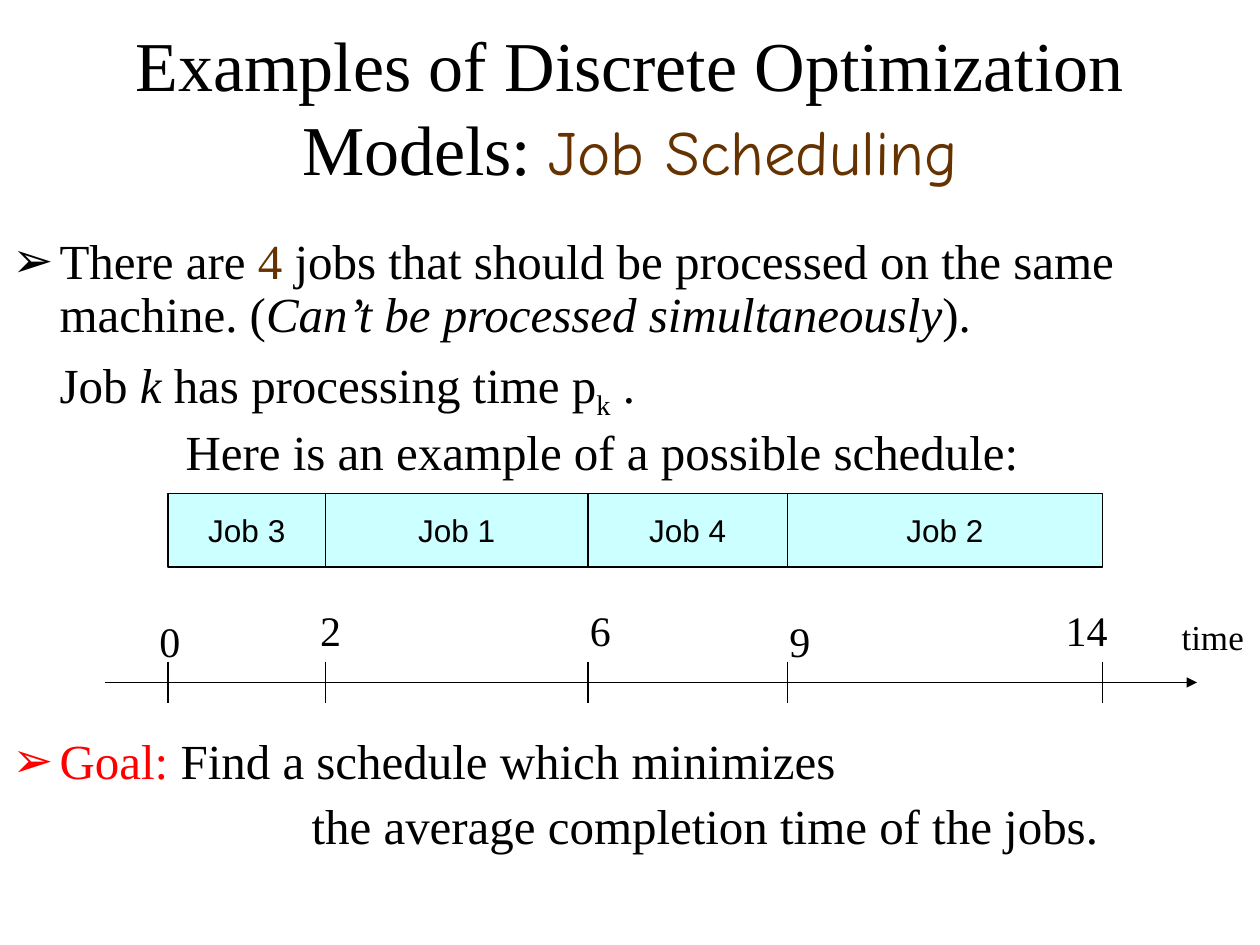
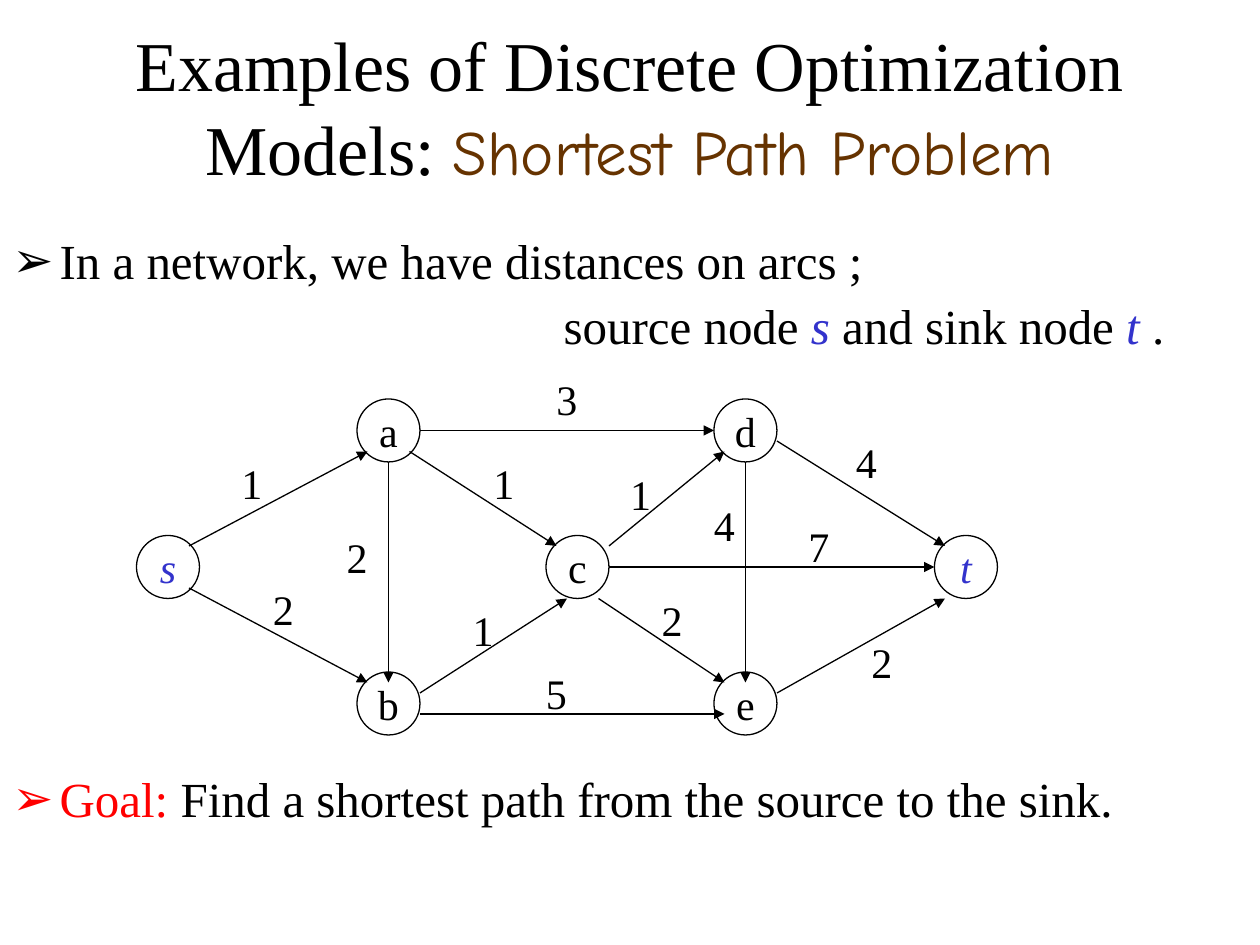
import pptx
import pptx.dml.color
import pptx.enum.shapes
import pptx.enum.text
import pptx.oxml
import pptx.oxml.ns
import pptx.util
import lxml.etree
from pptx.util import Cm, Pt

GRID = 2.54 / 12  # every position is a count of twelfths of an inch
BLACK, WHITE, BROWN = "000000", "FFFFFF", "663300"
RED, BLUE, CYAN = "FF0000", "3333CC", "CCFFFF"
SERIF, SANS, HAND = "Times New Roman", "Arial", "Comic Neue"
INDENT = 4.5
CENTER = pptx.enum.text.PP_ALIGN.CENTER
MIDDLE = pptx.enum.text.MSO_ANCHOR.MIDDLE
SHAPES = pptx.enum.shapes.MSO_SHAPE


def grid(count):
    return Cm(count * GRID)


def color(hex_code):
    return pptx.dml.color.RGBColor.from_string(hex_code)


def add_xml(parent, tag, **attributes):
    return lxml.etree.SubElement(parent, pptx.oxml.ns.qn(tag), attributes)


def set_font(font, size, name=SERIF, ink=BLACK):
    font.size, font.name = Pt(size), name
    font.color.rgb = color(ink)


def add_run(paragraph, text, ink=None, italic=False, subscript=False):
    run = paragraph.add_run()
    run.text = text
    if ink:
        run.font.color.rgb = color(ink)
    if italic:
        run.font.italic = True
    if subscript:
        run.font._element.set("baseline", "-25000")
    return run


def add_textbox(slide, left, top, width, height):
    frame = slide.shapes.add_textbox(*map(grid, (left, top, width, height))).text_frame
    frame.word_wrap = True
    return frame


def add_title(slide, topic):
    frame = add_textbox(slide, 9, 0, 102, 20)
    frame.vertical_anchor = MIDDLE
    heading = frame.paragraphs[0]
    heading.alignment = CENTER
    set_font(heading.font, 40)
    add_run(heading, "Examples of Discrete Optimization Models: ")
    set_font(add_run(heading, topic).font, 36, HAND, BROWN)


def add_body(slide, top, height, *items):
    """Each item is (left margin, bullet colour or None, runs)."""
    frame = add_textbox(slide, 0, top, 120, height)
    for number, (margin, bullet, runs) in enumerate(items):
        paragraph = frame.add_paragraph() if number else frame.paragraphs[0]
        properties = paragraph._p.get_or_add_pPr()
        properties.set("marL", str(grid(margin)))
        if bullet:
            properties.set("indent", str(-grid(INDENT)))
            add_xml(add_xml(properties, "a:buClr"), "a:srgbClr", val=bullet)
            add_xml(properties, "a:buFont", typeface=SANS)
            add_xml(properties, "a:buChar", char="➢")
        paragraph.line_spacing = 0.9
        paragraph.space_before = Pt(7)
        set_font(paragraph.font, 28)
        for run in runs:
            add_run(paragraph, *run)


def add_label(slide, text, left, top, width=6, size=24):
    label = add_textbox(slide, left, top, width, 6).paragraphs[0]
    label.alignment = CENTER
    label.text = text
    set_font(label.font, size)


def add_block(slide, kind, text, box, fill, size, font=SERIF, ink=BLACK, italic=False):
    block = slide.shapes.add_shape(kind, *map(grid, box))
    block.shadow.inherit = False
    block.fill.solid()
    block.fill.fore_color.rgb = color(fill)
    block.line.color.rgb = color(BLACK)
    block.line.width = Pt(0.75)
    frame = block.text_frame
    frame.word_wrap = False
    frame.vertical_anchor = MIDDLE
    caption = frame.paragraphs[0]
    caption.alignment = CENTER
    caption.text = text
    set_font(caption.font, size, font, ink)
    caption.font.italic = italic


def add_line(slide, start, end, arrow=False):
    line = slide.shapes.add_connector(
        pptx.enum.shapes.MSO_CONNECTOR.STRAIGHT, *map(grid, (*start, *end)))
    line.line.color.rgb = color(BLACK)
    line.line.width = Pt(0.75)
    if arrow:
        add_xml(line.line._get_or_add_ln(), "a:tailEnd", type="triangle")
    add_xml(line._element.spPr, "a:effectLst")


def build_job_scheduling(slide):
    add_title(slide, "Job Scheduling")
    add_body(
        slide, 22, 24,
        (INDENT, BLACK, [("There are ",), ("4", BROWN),
                         (" jobs that should be processed on the same machine. (",),
                         ("Can’t be processed simultaneously", None, True), (").",)]),
        (INDENT, None, [("Job ",), ("k", None, True), (" has processing time p",),
                        ("k", None, False, True), (" .",)]),
        (16.5, None, [("Here is an example of a possible schedule:",)]))
    add_body(
        slide, 69.6, 14,
        (INDENT, RED, [("Goal:", RED), (" Find a schedule which minimizes",)]),
        (28.5, None, [("the average completion time of the jobs.",)]))

    ticks = [16, 31, 56, 75, 105]
    jobs = ["Job 3", "Job 1", "Job 4", "Job 2"]
    for job, start, end in zip(jobs, ticks, ticks[1:]):
        add_block(slide, SHAPES.RECTANGLE, job, (start, 47, end - start, 7), CYAN, 18, SANS)

    add_line(slide, (10, 65), (114, 65), arrow=True)
    for tick in ticks:
        add_line(slide, (tick, 63), (tick, 67))
    add_label(slide, "time", 111, 58, 9, 20)
    for moment, left, top, width in [("0", 14, 58, 4), ("2", 29, 57, 5), ("6", 55, 57, 4),
                                     ("9", 74, 58, 4), ("14", 99, 57, 9)]:
        add_label(slide, moment, left, top, width)


def build_shortest_path(slide):
    add_title(slide, "Shortest Path Problem")
    add_body(
        slide, 22, 12,
        (INDENT, BLACK, [("In a network, we have distances on arcs ;",)]),
        (52.5, None, [("source node ",), ("s", BLUE, True), (" and sink node ",),
                      ("t", BLUE, True), (" .",)]))
    add_body(
        slide, 73.2, 8,
        (INDENT, RED, [("Goal:", RED),
                       (" Find a shortest path from the source to the sink.",)]))

    nodes = {"s": (13, 51), "b": (34, 64), "a": (34, 38), "d": (68, 38),
             "e": (68, 64), "t": (89, 51), "c": (52, 51)}
    for node, corner in nodes.items():
        terminal = node in "st"
        add_block(slide, SHAPES.OVAL, node, (*corner, 6, 6), WHITE, 24,
                  ink=BLUE if terminal else BLACK, italic=terminal)

    # start, end, distance, corner of the distance label
    arcs = [
        ((18, 52), (35, 43), "1", (21, 43)),
        ((18, 56), (35, 65), "2", (24, 55)),
        ((40, 41), (68, 41), "3", (51, 35)),
        ((74, 42), (90, 52), "4", (79.5, 41)),
        ((39, 43), (53, 52), "1", (45, 43)),
        ((58, 52), (69, 43), "1", (58, 44)),
        ((57, 57), (69, 65), "2", (61, 56)),
        ((40, 66), (54, 57), "1", (43, 57)),
        ((74, 66), (90, 57), "2", (81, 60)),
        ((40, 68), (69, 68), "5", (50, 63)),
        ((37, 44), (37, 65), "2", (31, 50)),
        ((71, 44), (71, 65), "4", (66, 47)),
        ((58, 54), (89, 54), "7", (75, 49)),
    ]
    for start, end, distance, corner in arcs:
        add_line(slide, start, end, arrow=True)
        add_label(slide, distance, *corner)


def main():
    deck = pptx.Presentation()
    deck.slide_width, deck.slide_height = Cm(25.4), Cm(19.05)
    for build in (build_job_scheduling, build_shortest_path):
        build(deck.slides.add_slide(deck.slide_layouts[6]))
    deck.save("out.pptx")


if __name__ == "__main__":
    main()
